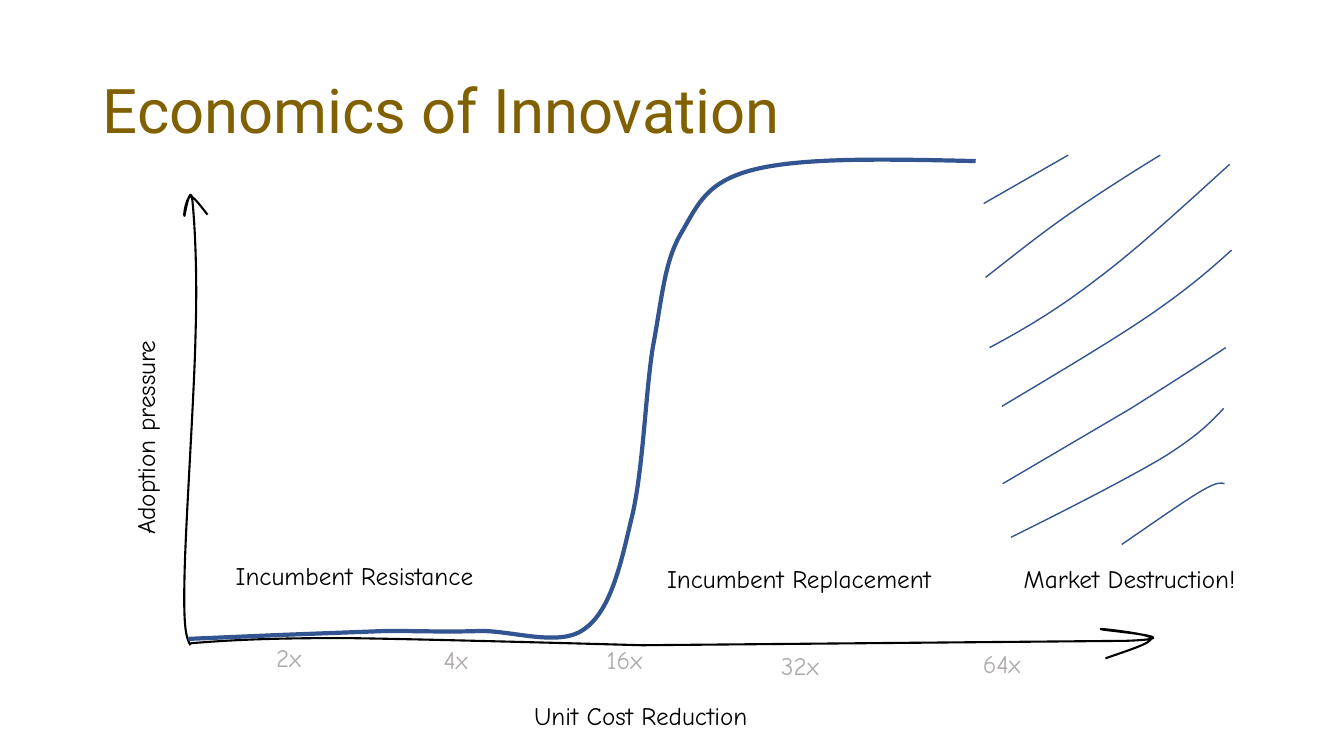
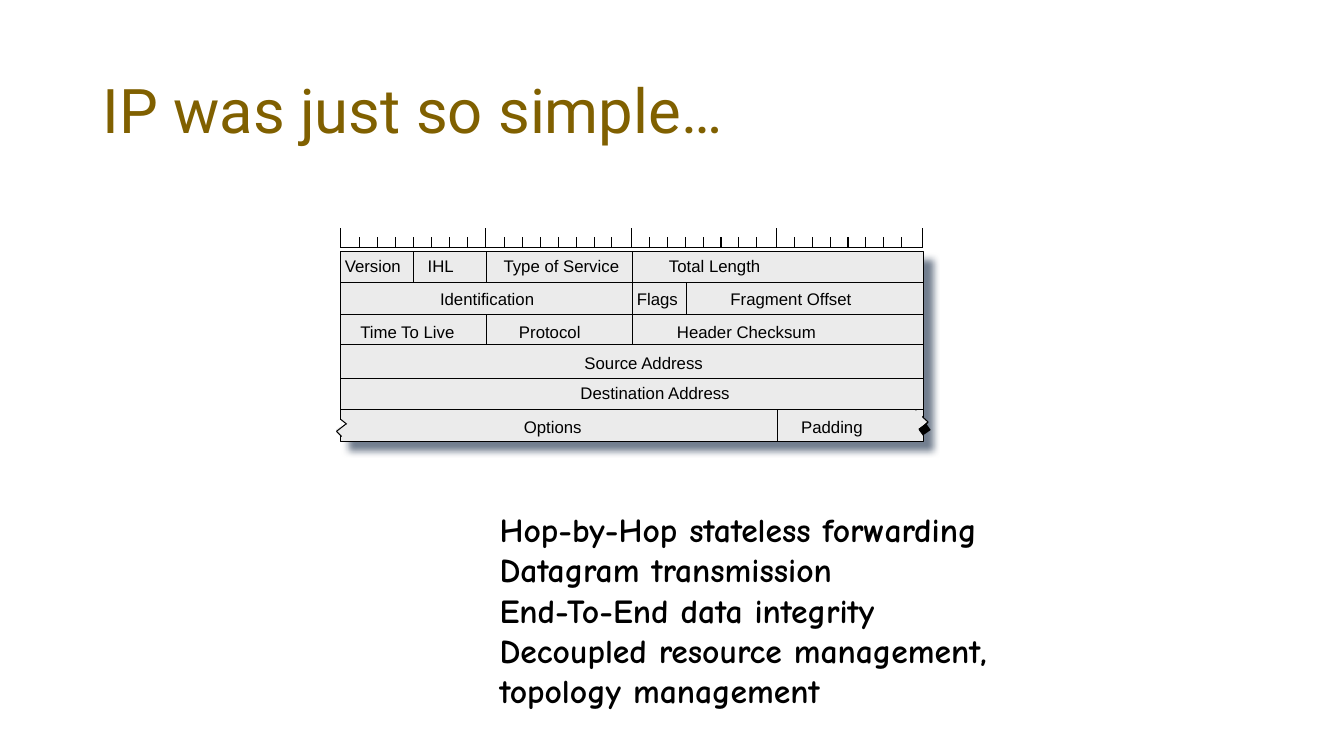
from lxml.etree import SubElement
from pptx import Presentation
from pptx.dml.color import RGBColor
from pptx.enum.shapes import MSO_CONNECTOR, MSO_SHAPE as Preset
from pptx.enum.text import MSO_ANCHOR as Anchor, MSO_AUTO_SIZE as AutoSize
from pptx.oxml.ns import qn
from pptx.util import Cm, Pt

GOLD, BLACK, WHITE = "806000", "000000", "FFFFFF"
BLUE, TICK_GREY, PALE, SHADOW = "325491", "AFABAB", "EBEBEB", "44546A"
TITLE_FONT, HAND_FONT, FIELD_FONT = "Roboto", "Comic Neue", "Arial"

# Each stroke is a start point, then segments: 1 point for a line, 3 for a Bezier curve.
COST_AXIS = [(4.8, 16.21),
             [(5.79, 16.13), (6.76, 16.08), (8.66, 16.08)],
             [(10.54, 16.1), (16.18, 16.26), (16.18, 16.26)],
             [(28.37, 16.15)],
             [(30.28, 16.08), (27.64, 15.88), (27.74, 15.85)],
             [(27.86, 15.85), (28.98, 15.98), (29.01, 16.08)],
             [(29.03, 16.21), (28.45, 16.38), (27.86, 16.59)]]
PRESSURE_AXIS = [(4.8, 16.26),
                 [(4.7, 16.08), (4.62, 15.88), (4.65, 14.58)],
                 [(4.67, 13.26), (4.9, 9.96), (4.93, 8.38)],
                 [(4.98, 6.78), (4.9, 5.54), (4.85, 5.05)],
                 [(4.8, 4.57), (4.65, 5.44), (4.65, 5.44)],
                 [(4.62, 5.41), (4.7, 4.98), (4.8, 4.95)],
                 [(4.88, 4.95), (5.05, 5.18), (5.23, 5.41)]]
ADOPTION_CURVE = [(4.75, 16.1),
                  [(7.09, 16)],
                  [(9.73, 15.9)],
                  [(10.57, 15.9), (11.28, 15.93), (12.12, 15.9)],
                  [(12.95, 15.9), (14.12, 16.31), (14.73, 15.85)],
                  [(15.37, 15.39), (15.62, 14.33), (15.9, 13.13)],
                  [(16.21, 11.94), (16.26, 9.91), (16.46, 8.71)],
                  [(16.69, 7.49), (16.74, 6.6), (17.17, 5.87)],
                  [(17.6, 5.13), (17.81, 4.57), (19.02, 4.27)],
                  [(20.27, 3.96), (22.43, 4.01), (24.59, 4.06)]]
DESTRUCTION_HATCHING = [
    [(24.79, 5.13), [(26.92, 3.91)]],
    [(24.84, 6.99), [(25.53, 6.45), (26.19, 5.92), (26.92, 5.41)],
     [(27.66, 4.9), (28.45, 4.39), (29.24, 3.91)]],
    [(24.94, 8.76), [(25.78, 8.31), (26.62, 7.82), (27.61, 7.06)],
     [(28.63, 6.3), (29.79, 5.23), (30.99, 4.14)]],
    [(25.25, 10.24), [(26.62, 9.42), (27.99, 8.61), (28.96, 7.95)],
     [(29.92, 7.29), (30.48, 6.81), (31.04, 6.3)]],
    [(25.27, 12.19), [(28.47, 10.31)],
     [(29.39, 9.73), (30.15, 9.25), (30.89, 8.76)]],
    [(25.48, 13.54), [(26.97, 12.8), (28.45, 12.04), (29.34, 11.51)],
     [(30.23, 10.95), (30.53, 10.62), (30.84, 10.29)]],
    [(28.27, 13.72), [(29.06, 13.18), (29.85, 12.62), (30.28, 12.37)],
     [(30.71, 12.12), (30.78, 12.17), (30.86, 12.19)]],
]

# Text, left, top, width
PHASES = [("Incumbent Resistance", 5.69, 14, 7.65),
          ("Incumbent Replacement", 16.56, 14.07, 8.2),
          ("Market Destruction!", 25.55, 14.07, 7.04)]
COST_FACTORS = [("2x", 6.71, 16.06, 1.5), ("4x", 10.93, 16.12, 1.4),
                ("16x", 15.04, 16.12, 1.7), ("32x", 19.43, 16.26, 1.93),
                ("64x", 24.52, 16.21, 1.83)]

# Rows of the IP header: label top, then fields as name, label left, label width
HEADER_ROWS = [
    (6.31, [("Version", 8.44, 1.98), ("IHL", 10.53, 1.19),
            ("Type of Service", 12.44, 3.45), ("Total Length", 16.61, 2.84)]),
    (7.16, [("Identification", 10.84, 2.92), ("Flags", 15.8, 1.55),
            ("Fragment Offset", 18.16, 3.58)]),
    (7.98, [("Time To Live", 8.83, 2.92), ("Protocol", 12.83, 2.08),
            ("Header Checksum", 16.81, 4.06)]),
    (8.76, [("Source Address", 14.48, 3.53)]),
    (9.53, [("Destination Address", 14.38, 4.32)]),
    (10.37, [("Options", 12.95, 1.98), ("Padding", 19.94, 2.08)]),
]
HEADER_LEFT, HEADER_WIDTH = 8.59, 14.68
ROW_EDGES = [6.35, 7.11, 7.92, 8.69, 9.53, 10.31, 11.13]
BIT = HEADER_WIDTH / 32
# Bit, first edge, last edge
DIVIDERS = [(4, 0, 1), (8, 0, 1), (19, 1, 2), (8, 2, 3), (24, 5, 6)]
RULER_LEFT, RULER_BASE = 8.57, 6.23
PRINCIPLES = ["Hop-by-Hop stateless forwarding", "Datagram transmission",
              "End-To-End data integrity",
              "Decoupled resource management, topology management"]


def rgb(color):
    return RGBColor.from_string(color)


def add_text(slide, lines, box, font, size, color=BLACK, bold=False, wrap=False):
    holder = slide.shapes.add_textbox(*map(Cm, box))
    frame = holder.text_frame
    frame.word_wrap = wrap
    frame.auto_size = AutoSize.NONE if wrap else AutoSize.SHAPE_TO_FIT_TEXT
    for index, line in enumerate(lines):
        paragraph = frame.paragraphs[0] if index == 0 else frame.add_paragraph()
        run = paragraph.add_run()
        run.text = line
        run.font.name, run.font.size, run.font.bold = font, Pt(size), bold
        run.font.color.rgb = rgb(color)
    return holder


def add_title(slide, title):
    frame = add_text(slide, [title], (2.34, 1.02, 29.21, 3.68), TITLE_FONT, 44,
                     GOLD, wrap=True).text_frame
    frame.vertical_anchor = Anchor.MIDDLE
    frame.paragraphs[0].line_spacing = 0.9


def add_hand_label(slide, text, left, top, width, color=BLACK):
    return add_text(slide, [text], (left, top, width, 1.02), HAND_FONT, 18, color)


def bend(outline, segments):
    """Turn the straight pieces that have control points into Bezier curves."""
    pieces = list(outline._element.iter(qn("a:lnTo")))
    for piece, segment in zip(pieces, segments):
        if len(segment) == 3:
            curve = piece.getparent().makeelement(qn("a:cubicBezTo"))
            for x, y in segment:
                SubElement(curve, qn("a:pt"), x=str(Cm(x) - outline.left),
                           y=str(Cm(y) - outline.top))
            piece.getparent().replace(piece, curve)


def add_stroke(slide, stroke, color, weight):
    (x, y), *segments = stroke
    ends = [segment[-1] for segment in segments]
    pen = slide.shapes.build_freeform(Cm(x), Cm(y))
    pen.add_line_segments([tuple(map(Cm, end)) for end in ends], close=False)
    outline = pen.convert_to_shape()
    bend(outline, segments)
    outline.shadow.inherit = False
    outline.fill.background()
    outline.line.color.rgb = rgb(color)
    outline.line.width = Pt(weight)


def add_line(slide, start, end, color=BLACK):
    line = slide.shapes.add_connector(MSO_CONNECTOR.STRAIGHT, *map(Cm, start + end))
    line.line.color.rgb = rgb(color)
    line.line.width = Pt(0.75)
    SubElement(line._element.spPr, qn("a:effectLst"))
    return line


def add_block(slide, box, fill, outlined=False, rotation=0, preset=Preset.RECTANGLE):
    block = slide.shapes.add_shape(preset, *map(Cm, box))
    block.shadow.inherit = False
    block.rotation = rotation
    block.fill.solid()
    block.fill.fore_color.rgb = rgb(fill)
    if outlined:
        block.line.color.rgb = rgb(BLACK)
        block.line.width = Pt(0.75)
    else:
        block.line.fill.background()
    return block


def cast_shadow(block):
    effects = block._element.spPr.find(qn("a:effectLst"))
    shadow = SubElement(effects, qn("a:outerShdw"), blurRad=str(Pt(5)),
                        dist=str(Pt(8.5)), dir="2700000", algn="tl", rotWithShape="0")
    tint = SubElement(shadow, qn("a:srgbClr"), val=SHADOW)
    SubElement(tint, qn("a:alpha"), val="75000")


def add_bit_ruler(slide):
    add_line(slide, (RULER_LEFT, RULER_BASE), (RULER_LEFT + HEADER_WIDTH, RULER_BASE))
    byte_marks = [RULER_LEFT + byte * 8 * BIT for byte in range(5)]
    bit_marks = [9.07 + byte * 3.65 + bit * 0.45 for byte in range(4) for bit in range(7)]
    for marks, height in ((byte_marks, 0.48), (bit_marks, 0.25)):
        for x in marks:
            add_line(slide, (x, RULER_BASE), (x, RULER_BASE - height))


def add_header_grid(slide, header):
    for y in ROW_EDGES[1:-1]:
        add_line(slide, (HEADER_LEFT, y), (HEADER_LEFT + HEADER_WIDTH, y))
    for bit, first, last in DIVIDERS:
        x = HEADER_LEFT + bit * BIT
        add_line(slide, (x, ROW_EDGES[first]), (x, ROW_EDGES[last]))
    middle = HEADER_LEFT + HEADER_WIDTH / 2
    half_word = add_line(slide, (middle, ROW_EDGES[0]), (middle, ROW_EDGES[3]))
    half_word.begin_connect(header, 0)


def add_field_names(slide):
    for top, fields in HEADER_ROWS:
        for name, left, width in fields:
            add_text(slide, [name], (left, top, width, 0.76), FIELD_FONT, 12)


def add_right_break(slide):
    add_block(slide, (22.89, 10.44, 0.41, 0.41), PALE, outlined=True, rotation=42.3)
    add_block(slide, (22.68, 10.36, 0.56, 0.64), PALE)
    add_block(slide, (23.19, 10.72, 0.23, 0.2), BLACK, rotation=324.6)
    for start in ((23.39, 10.64), (23.27, 10.97)):
        add_line(slide, start, (23.16, 10.82))


def add_left_break(slide):
    add_block(slide, (8.51, 10.74, 0.23, 0.2), PALE, rotation=324.6)
    add_line(slide, (8.61, 11), (8.48, 10.87))
    add_block(slide, (8.51, 10.59, 0.18, 0.18), WHITE, rotation=225,
              preset=Preset.RIGHT_TRIANGLE)
    add_line(slide, (8.59, 10.59), (8.59, 10.77), WHITE)
    add_line(slide, (8.71, 10.69), (8.48, 10.87))
    add_line(slide, (8.59, 10.57), (8.74, 10.69))


def build_economics(slide):
    add_title(slide, "Economics of Innovation")
    for axis in (COST_AXIS, PRESSURE_AXIS):
        add_stroke(slide, axis, BLACK, 1.5)
    add_hand_label(slide, "Unit Cost Reduction", 13.21, 17.53, 7.47)
    add_hand_label(slide, "Adoption pressure", 0.51, 10.07, 6.3).rotation = 270
    for factor in COST_FACTORS:
        add_hand_label(slide, *factor, color=TICK_GREY)
    add_stroke(slide, ADOPTION_CURVE, BLUE, 3)
    for phase in PHASES:
        add_hand_label(slide, *phase)
    for hatch in DESTRUCTION_HATCHING:
        add_stroke(slide, hatch, BLUE, 1)


def build_ip_header(slide):
    add_title(slide, "IP was just so simple…")
    header = add_block(slide, (HEADER_LEFT, ROW_EDGES[0], HEADER_WIDTH,
                               ROW_EDGES[-1] - ROW_EDGES[0]), PALE, outlined=True)
    cast_shadow(header)
    add_right_break(slide)
    add_header_grid(slide, header)
    add_field_names(slide)
    add_bit_ruler(slide)
    add_left_break(slide)
    add_text(slide, PRINCIPLES, (12.34, 12.7, 14.33, 4.37), HAND_FONT, 24,
             bold=True, wrap=True)


def main():
    deck = Presentation()
    deck.slide_width, deck.slide_height = Cm(33.87), Cm(19.05)
    blank = deck.slide_layouts[6]
    for build in (build_economics, build_ip_header):
        build(deck.slides.add_slide(blank))
    deck.save("out.pptx")


if __name__ == "__main__":
    main()
